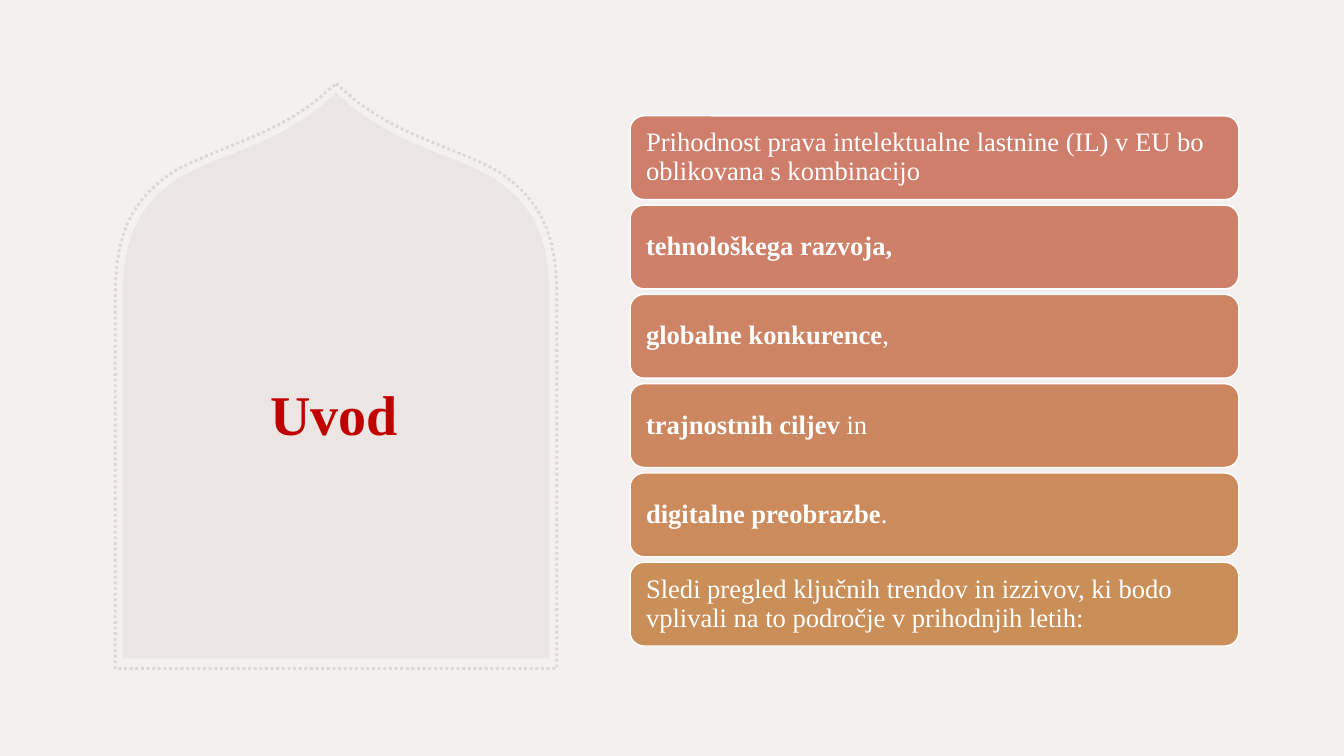
from lxml import etree
from pptx import Presentation
from pptx import util as u
from pptx.dml.color import RGBColor
from pptx.enum import dml, shapes, text
from pptx.oxml.ns import qn

FONT = "Times New Roman"
ARCH_CENTRE = 8.47
CURVE_STEPS = 16

# Right half of the arch in cm from its tip: start and end of the two curves
SHOULDER_CURVES = [
    [(0.48, 0.41), (1.65, 1.32), (2.97, 1.57), (3.99, 2.16)],
    [(3.99, 2.16), (4.95, 2.82), (5.38, 3.61), (5.38, 5.16)],
]
ARCH_FOOT = (5.38, 14.25)

BARS = [
    ("CF7E6C", "", "Prihodnost prava intelektualne lastnine (IL) v EU bo oblikovana s kombinacijo"),
    ("CE8168", "tehnološkega razvoja,", ""),
    ("CD8464", "globalne konkurence", ","),
    ("CC8760", "trajnostnih ciljev", " in"),
    ("CB8B5C", "digitalne preobrazbe", "."),
    ("CA8F58", "", "Sledi pregled ključnih trendov in izzivov, ki bodo vplivali na to področje v prihodnjih letih:"),
]


def color(hex_code):
    return RGBColor.from_string(hex_code)


def add_arch(slide, tip_top, scale):
    """Add a symmetric pointed arch, enlarged from its tip by scale."""
    right = [(0, 0)]
    for curve in SHOULDER_CURVES:
        for step in range(CURVE_STEPS + 1):
            t = step / CURVE_STEPS
            weights = ((1 - t) ** 3, 3 * t * (1 - t) ** 2, 3 * t**2 * (1 - t), t**3)
            right.append(tuple(sum(w * point[axis] for w, point in zip(weights, curve))
                               for axis in (0, 1)))
    right.append(ARCH_FOOT)
    left = [(-x, y) for x, y in reversed(right[1:])]
    outline = [(u.Cm(ARCH_CENTRE + x * scale), u.Cm(tip_top + y * scale)) for x, y in right + left]
    builder = slide.shapes.build_freeform(*outline[0])
    builder.add_line_segments(outline[1:], close=True)
    arch = builder.convert_to_shape()
    arch.shadow.inherit = False
    return arch


presentation = Presentation()
presentation.slide_width = u.Cm(33.87)
presentation.slide_height = u.Cm(19.05)
slide = presentation.slides.add_slide(presentation.slide_layouts[5])
slide.background.fill.solid()
slide.background.fill.fore_color.rgb = color("F3F0EF")

# Arch panel with dotted border
panel = add_arch(slide, 2.34, 1)
panel.fill.solid()
panel.fill.fore_color.rgb = color("BFAFAA")
etree.SubElement(panel.element.find(".//" + qn("a:srgbClr")), qn("a:alpha"), val="15000")
panel.line.fill.background()

border = add_arch(slide, 2.11, 1.034)
border.fill.background()
border.line.color.rgb = color("DED6D3")
border.line.width = u.Pt(2)
border.line.dash_style = dml.MSO_LINE.ROUND_DOT

# Title, brought in front of the arch
title = slide.shapes.title
border.element.addnext(title.element)
title.left, title.top, title.width, title.height = u.Cm(4.09), u.Cm(6.4), u.Cm(8.66), u.Cm(8)
title.text_frame.text = "Uvod"
title.text_frame.auto_size = text.MSO_AUTO_SIZE.NONE
title.text_frame.vertical_anchor = text.MSO_ANCHOR.MIDDLE
title_paragraph = title.text_frame.paragraphs[0]
title_paragraph.alignment = text.PP_ALIGN.CENTER
title_font = title_paragraph.runs[0].font
title_font.name = FONT
title_font.size = u.Pt(40)
title_font.bold = True
title_font.color.rgb = color("C00000")

# Stacked bars
for index, (fill, bold_text, plain_text) in enumerate(BARS):
    bar = slide.shapes.add_shape(shapes.MSO_SHAPE.ROUNDED_RECTANGLE, u.Cm(15.88),
                                 u.Cm(2.92 + index * 2.25), u.Cm(15.34), u.Cm(2.11))
    bar.shadow.inherit = False
    bar.fill.solid()
    bar.fill.fore_color.rgb = color(fill)
    bar.line.color.rgb = color("FFFFFF")
    bar.line.width = u.Pt(1)
    frame = bar.text_frame
    frame.word_wrap = True
    frame.vertical_anchor = text.MSO_ANCHOR.MIDDLE
    frame.margin_left = frame.margin_right = u.Cm(0.3)
    frame.margin_top = frame.margin_bottom = u.Cm(0.2)
    paragraph = frame.paragraphs[0]
    paragraph.alignment = text.PP_ALIGN.LEFT
    paragraph.line_spacing = 0.9
    for words, bold in ((bold_text, True), (plain_text, False)):
        if words:
            run = paragraph.add_run()
            run.text = words
            run.font.name = FONT
            run.font.size = u.Pt(19)
            run.font.bold = bold
            run.font.color.rgb = color("FFFFFF")

presentation.save("out.pptx")
